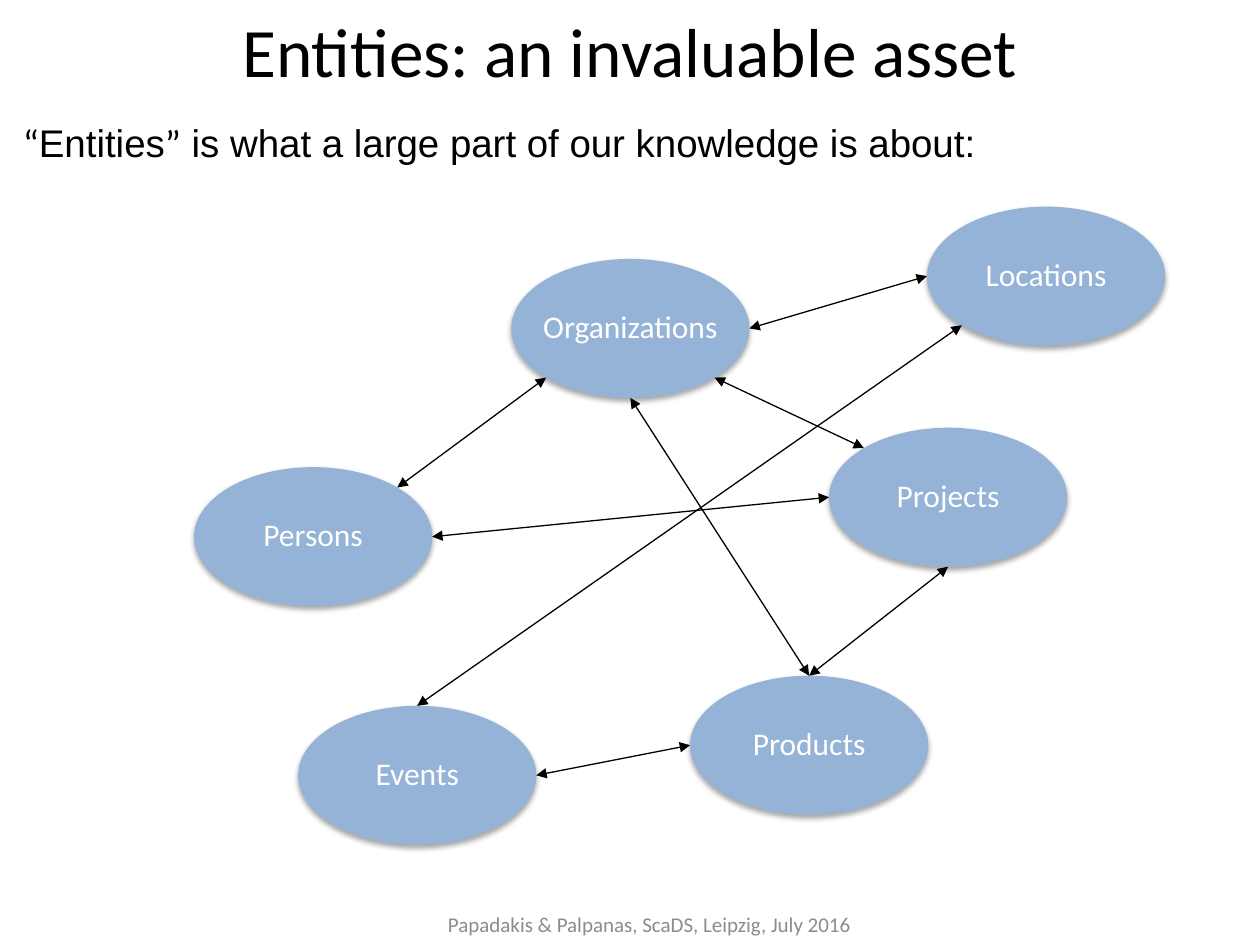
from dataclasses import dataclass
from math import cos, radians, sin

from lxml.etree import SubElement
from pptx import Presentation
from pptx.dml.color import RGBColor
from pptx.enum.shapes import MSO_CONNECTOR, MSO_SHAPE
from pptx.enum.text import MSO_ANCHOR, PP_ALIGN
from pptx.oxml.ns import qn
from pptx.util import Inches, Pt

COLORS = {"ink": "000000", "node": "95B3D7", "label": "FFFFFF", "foot": "8C8C8C"}
CELL = Inches(0.1)  # the slide is a grid of 100 columns by 75 rows
COLS, ROWS = 100, 75
NODE_W, NODE_H = 18.9, 11.03

# Direction of each docking point on an ellipse, in degrees clockwise from the right
SITES = {"right": 0, "lower right": 45, "bottom": 90, "lower left": 135,
         "left": 180, "top": 270, "upper left": 225, "upper right": 315}


@dataclass
class Node:
    name: str
    col: float
    row: float

    def site(self, side: str) -> tuple[float, float]:
        turn = radians(SITES[side])
        return (self.col + NODE_W / 2 * (1 + cos(turn)),
                self.row + NODE_H / 2 * (1 + sin(turn)))


@dataclass
class Link:
    start: str
    out: str
    end: str
    into: str


NODES = [
    Node("Persons", 15.4, 37.08),
    Node("Organizations", 40.58, 20.55),
    Node("Projects", 65.8, 33.95),
    Node("Locations", 73.57, 16.4),
    Node("Products", 54.77, 53.63),
    Node("Events", 23.66, 56.02),
]
LINKS = [
    Link("Persons", "upper right", "Organizations", "lower left"),
    Link("Organizations", "right", "Locations", "left"),
    Link("Organizations", "lower right", "Projects", "upper left"),
    Link("Projects", "bottom", "Products", "top"),
    Link("Persons", "right", "Projects", "left"),
    Link("Events", "right", "Products", "left"),
    Link("Products", "top", "Organizations", "bottom"),
    Link("Events", "top", "Locations", "lower left"),
]


def grid(*cells: float) -> list[int]:
    return [round(cell * CELL) for cell in cells]


def color(name: str) -> RGBColor:
    return RGBColor.from_string(COLORS[name])


def write(shape, *runs: tuple[str, str], size: float, tint: str = "ink",
          align=PP_ALIGN.CENTER, anchor=MSO_ANCHOR.MIDDLE, wrap: bool = True,
          before: float = 0, pitch: float = 1):
    """Fill a shape with one paragraph of (text, font name) runs."""
    frame = shape.text_frame
    frame.word_wrap = wrap
    frame.vertical_anchor = anchor
    para = frame.paragraphs[0]
    para.alignment = align
    para.space_before = Pt(before)
    para.line_spacing = pitch
    for text, face in runs:
        run = para.add_run()
        run.text = text
        run.font.name = face
        run.font.size = Pt(size)
        run.font.color.rgb = color(tint)
    return para


def draw_node(slide, node: Node) -> None:
    oval = slide.shapes.add_shape(
        MSO_SHAPE.OVAL, *grid(node.col, node.row, NODE_W, NODE_H))
    oval.fill.solid()
    oval.fill.fore_color.rgb = color("node")
    oval.line.fill.background()
    oval.shadow.inherit = False
    cast = SubElement(oval._element.spPr.find(qn("a:effectLst")), qn("a:outerShdw"),
                      blurRad=str(Pt(3.1)), dist=str(Pt(1.8)),
                      dir="5400000", rotWithShape="0")
    shade = SubElement(cast, qn("a:srgbClr"), val=COLORS["ink"])
    SubElement(shade, qn("a:alpha"), val="35000")
    write(oval, (node.name, "Calibri"), size=18, tint="label", wrap=False, pitch=0.91)


def draw_link(slide, link: Link, nodes: dict[str, Node]) -> None:
    ends = nodes[link.start].site(link.out) + nodes[link.end].site(link.into)
    line = slide.shapes.add_connector(MSO_CONNECTOR.STRAIGHT, *grid(*ends))
    line.line.color.rgb = color("ink")
    line.line.width = Pt(0.75)
    stroke = line.line._get_or_add_ln()
    for tip in ("a:headEnd", "a:tailEnd"):
        SubElement(stroke, qn(tip), type="triangle")
    SubElement(line._element.spPr, qn("a:effectLst"))


def main() -> None:
    deck = Presentation()
    deck.slide_width, deck.slide_height = grid(COLS, ROWS)
    slide = deck.slides.add_slide(deck.slide_layouts[6])

    title = slide.shapes.add_textbox(*grid(0, 0, COLS, 7.9))
    write(title, ("Entities: an invaluable asset", "Calibri"), size=39.6)

    lead = slide.shapes.add_textbox(*grid(0.83, 8.95, 90, 54))
    para = write(lead, ("“", "Calibri"), ("Entities", "Arial"), ("”", "Calibri"),
                 (" is what a large part of our knowledge is about:", "Arial"),
                 size=22, align=PP_ALIGN.LEFT, anchor=MSO_ANCHOR.TOP, before=4.4)
    props = para._p.get_or_add_pPr()
    props.set("marL", str(Inches(0.38)))
    props.set("indent", str(Inches(-0.38)))

    for node in NODES:
        draw_node(slide, node)
    nodes = {node.name: node for node in NODES}
    for link in LINKS:
        draw_link(slide, link, nodes)

    foot = slide.shapes.add_textbox(*grid(34.2, 71.7, 34.7, 3.2))
    write(foot, ("Papadakis & Palpanas, ScaDS, Leipzig, July 2016", "Calibri"),
          size=12, tint="foot")
    deck.save("out.pptx")


if __name__ == "__main__":
    main()
